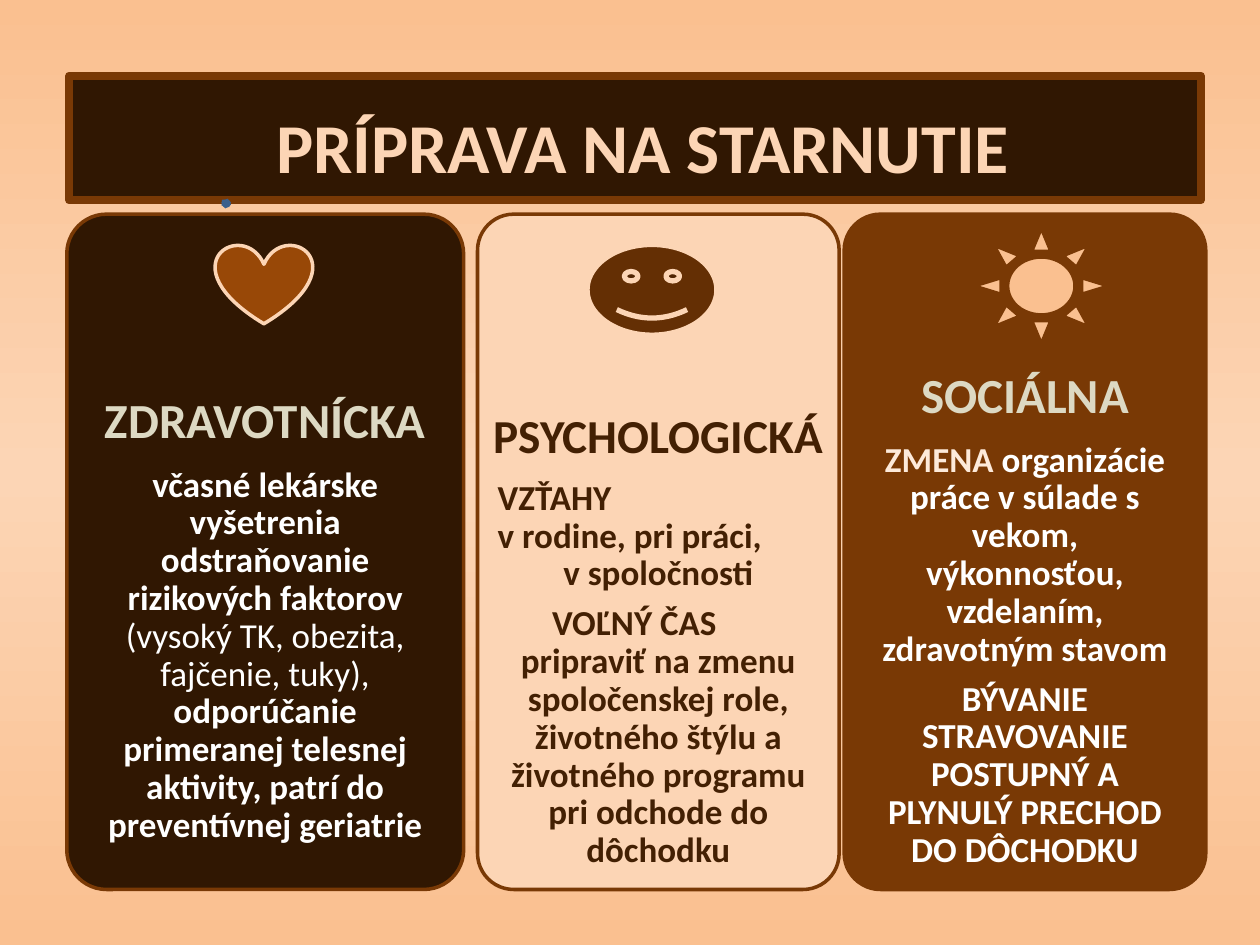
"""Build a slide on preparing for old age: a title bar over three cards."""
from lxml.etree import SubElement
from pptx import Presentation
from pptx.dml.color import RGBColor
from pptx.enum.shapes import MSO_SHAPE
from pptx.enum.text import MSO_ANCHOR, MSO_AUTO_SIZE, PP_ALIGN
from pptx.oxml.ns import qn
from pptx.util import Inches, Pt


class Theme:
    font = "Calibri"
    dark, brown, rust, cocoa = "301702", "793905", "984807", "642F04"
    peach, cream, pale, sand = "FAC090", "FCD5B5", "FDEADA", "DDD9C3"
    ink, white, blue, navy = "432003", "FFFFFF", "4F81BD", "3A5F8C"
    title, head, snug, body = 40, 28, 27, 20


def write(para, text, size=Theme.body, color=Theme.white, bold=True):
    run = para.add_run()
    run.text = text
    font = run.font
    font.name, font.size, font.bold = Theme.font, Pt(size), bold
    font.color.rgb = RGBColor.from_string(color)


def draw(kind, area, fill, line, width=2):
    shape = slide.shapes.add_shape(kind, *map(Inches, area))
    shape.shadow.inherit = False
    shape.fill.solid()
    shape.fill.fore_color.rgb = RGBColor.from_string(fill)
    shape.line.color.rgb = RGBColor.from_string(line)
    shape.line.width = Pt(width)
    return shape


deck = Presentation()
deck.slide_width, deck.slide_height = Inches(10), Inches(7.5)
slide = deck.slides.add_slide(deck.slide_layouts.get_by_name("Comparison"))
holders = {item.placeholder_format.idx: item for item in slide.placeholders}
spare = holders[4].element
spare.getparent().remove(spare)

back = slide.background.fill
back.gradient()
back.gradient_angle = 270
stops = next(slide.element.iter(qn("a:gsLst")))
for stop in list(stops):
    stops.remove(stop)
for place, color in ((0, Theme.peach), (50, Theme.cream), (100, Theme.peach)):
    stop = SubElement(stops, qn("a:gs"), pos=str(place * 1000))
    SubElement(stop, qn("a:srgbClr"), val=color)

ink = {"color": Theme.ink}
flush = {"after": 0, "align": PP_ALIGN.LEFT, "left": 0.04}
health = [
    ({"after": 10}, [("ZDRAVOTNÍCKA", {"size": Theme.head, "color": Theme.sand})]),
    ({}, [
        ("včasné lekárske vyšetrenia odstraňovanie rizikových faktorov ", {}),
        ("(vysoký TK, obezita, fajčenie, tuky), ", {"bold": False}),
        ("odporúčanie primeranej telesnej aktivity, patrí do preventívnej geriatrie", {}),
    ]),
]
mind = [
    ({"after": 9.5}, [("PSYCHOLOGICKÁ", {"size": Theme.snug, **ink})]),
    (flush, [("VZŤAHY", ink)]),
    (flush, [("v rodine, pri práci,", ink)]),
    ({}, [("v spoločnosti", ink)]),
    ({"after": 0, "right": 0.38}, [("VOĽNÝ ČAS", ink)]),
    ({}, [("pripraviť na zmenu spoločenskej role, životného štýlu a "
           "životného programu pri odchode do dôchodku", ink)]),
]
social = [
    ({"after": 10}, [("SOCIÁLNA", {"size": Theme.head, "color": Theme.sand})]),
    ({}, [
        ("ZMENA ", {"color": Theme.pale}),
        ("organizácie práce v súlade s vekom, výkonnosťou, vzdelaním, "
         "zdravotným stavom", {}),
    ]),
    ({}, [("BÝVANIE STRAVOVANIE POSTUPNÝ A PLYNULÝ PRECHOD DO DÔCHODKU", {})]),
]
cards = [
    (0.53, 3.15, Theme.dark, 0.22, 0.22, health),
    (3.79, 2.87, Theme.cream, 0.12, 0.45, mind),
    (6.7, 2.87, Theme.brown, 0.22, 0.22, social),
]
for index, (left, width, fill, inset, top, text) in enumerate(cards, 1):
    card = draw(MSO_SHAPE.ROUNDED_RECTANGLE, (left, 1.7, width, 5.36), fill, Theme.brown)
    card.adjustments[0] = 0.1
    box = holders[index]
    card.element.addnext(box.element)
    box.left, box.top = Inches(left), Inches(3.85)
    box.width, box.height = Inches(width), Inches(2.15)
    frame = box.text_frame
    frame.auto_size, frame.word_wrap = MSO_AUTO_SIZE.NONE, True
    frame.vertical_anchor = MSO_ANCHOR.MIDDLE
    frame.margin_left = frame.margin_right = frame.margin_bottom = Inches(inset)
    frame.margin_top = Inches(top)
    for row, (form, runs) in enumerate(text):
        para = frame.add_paragraph() if row else frame.paragraphs[0]
        para.alignment = form.get("align", PP_ALIGN.CENTER)
        para.line_spacing = 0.9
        para.space_before, para.space_after = Pt(0), Pt(form.get("after", 7))
        props = para._p.get_or_add_pPr()
        props.set("marL", str(Inches(form.get("left", 0))))
        props.set("marR", str(Inches(form.get("right", 0))))
        props.set("indent", "0")
        SubElement(props, qn("a:buNone"))
        for words, style in runs:
            write(para, words, **style)

draw(MSO_SHAPE.HEART, (1.71, 1.94, 0.77, 0.63), Theme.rust, Theme.cream)
draw(MSO_SHAPE.SMILEY_FACE, (4.66, 1.94, 1.03, 0.72), Theme.cocoa, Theme.cream, 3)
draw(MSO_SHAPE.SUN, (7.73, 1.81, 1.07, 0.92), Theme.peach, Theme.brown)

title = slide.shapes.title
title.left, title.top = Inches(0.55), Inches(0.6)
title.width, title.height = Inches(8.98), Inches(0.99)
title.fill.solid()
title.fill.fore_color.rgb = RGBColor.from_string(Theme.dark)
title.line.color.rgb = RGBColor.from_string(Theme.brown)
title.line.width = Pt(4.5)
frame = title.text_frame
frame.auto_size = MSO_AUTO_SIZE.NONE
frame.vertical_anchor = MSO_ANCHOR.MIDDLE
frame.margin_left, frame.margin_top = Inches(0.22), Inches(0.17)
frame.paragraphs[0].alignment = PP_ALIGN.CENTER
write(frame.paragraphs[0], "PRÍPRAVA NA STARNUTIE", Theme.title, Theme.cream)

draw(MSO_SHAPE.EXPLOSION1, (1.77, 1.59, 0.05, 0.05), Theme.blue, Theme.navy)
deck.save("out.pptx")
